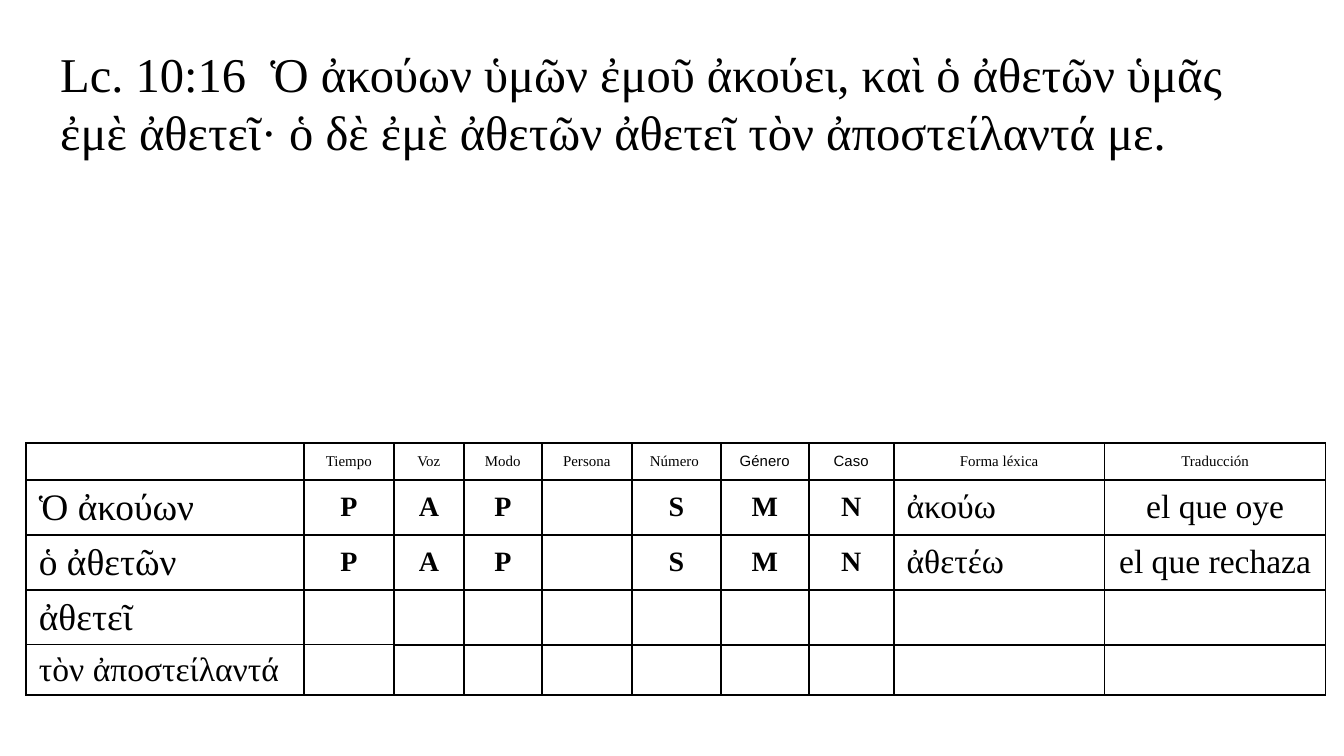
import pptx
import pptx.util
import pptx.dml.color
import pptx.enum.text
import lxml.etree
import pptx.oxml.ns

PX = 914400 / 134.4
BLACK = pptx.dml.color.RGBColor(0, 0, 0)
SERIF = "Times New Roman"
LEFT = pptx.enum.text.PP_ALIGN.LEFT
CENTER = pptx.enum.text.PP_ALIGN.CENTER
MIDDLE = pptx.enum.text.MSO_ANCHOR.MIDDLE
qn = pptx.oxml.ns.qn


def px(length):
    return pptx.util.Emu(round(length * PX))


def add_text(paragraph, text, size, font=SERIF, bold=False, align=LEFT):
    paragraph.alignment = align
    run = paragraph.add_run()
    run.text = text
    run.font.size = pptx.util.Pt(size)
    run.font.name = font
    run.font.bold = bold
    run.font.color.rgb = BLACK


presentation = pptx.Presentation()
presentation.slide_width = px(1344)
presentation.slide_height = px(756)
slide = presentation.slides.add_slide(presentation.slide_layouts[6])

headings = ["", "Tiempo", "Voz", "Modo", "Persona", "Número ", "Género", "Caso",
            "Forma léxica", "Traducción"]
parsing = ["P", "A", "P", "", "S", "M", "N"]
rows = [
    headings,
    ["Ὁ ἀκούων", *parsing, "ἀκούω", "el que oye"],
    ["ὁ ἀθετῶν", *parsing, "ἀθετέω", "el que rechaza"],
    ["ἀθετεῖ"] + [""] * 9,
    ["τὸν ἀποστείλαντά"] + [""] * 9,
]
column_widths = [278, 90, 70, 78, 90, 89, 88, 85, 211, 221]
row_heights = [37, 55, 55, 55, 50]

analysis = slide.shapes.add_table(
    len(rows), len(headings), px(26), px(443),
    px(sum(column_widths)), px(sum(row_heights))).table
analysis.first_row = False
analysis.horz_banding = False
for column, width in zip(analysis.columns, column_widths):
    column.width = px(width)
for row, height in zip(analysis.rows, row_heights):
    row.height = px(height)

for r, words in enumerate(rows):
    for c, word in enumerate(words):
        cell = analysis.cell(r, c)
        cell.vertical_anchor = MIDDLE
        cell.margin_left = cell.margin_right = px(13)
        cell.margin_top = cell.margin_bottom = px(5)
        properties = cell._tc.get_or_add_tcPr()
        for side in ("L", "R", "T", "B"):
            thin = c < 2 and (side == "B" and r < 4 or side == "T" and r > 0)
            border = lxml.etree.SubElement(
                properties, qn("a:ln" + side), w="9525" if thin else "12700")
            fill = lxml.etree.SubElement(border, qn("a:solidFill"))
            lxml.etree.SubElement(fill, qn("a:srgbClr"), val=str(BLACK))
        cell.fill.background()

        paragraph = cell.text_frame.paragraphs[0]
        if not word:
            lxml.etree.SubElement(paragraph._p, qn("a:endParaRPr"), sz="800")
        elif r == 0:
            font = "Arial" if word in ("Género", "Caso") else SERIF
            add_text(paragraph, word, 8, font, align=CENTER)
        elif c == 0:
            add_text(paragraph, word, 18 if r == 4 else 20)
        elif c < 8:
            add_text(paragraph, word, 15, bold=True, align=CENTER)
        else:
            add_text(paragraph, word, 18, align=LEFT if c == 8 else CENTER)

verse = slide.shapes.add_textbox(px(47), px(36), px(1243), px(132)).text_frame
verse.word_wrap = True
verse.vertical_anchor = MIDDLE
add_text(verse.paragraphs[0],
         "Lc. 10:16  Ὁ ἀκούων ὑμῶν ἐμοῦ ἀκούει, καὶ ὁ ἀθετῶν ὑμᾶς ἐμὲ ἀθετεῖ· "
         "ὁ δὲ ἐμὲ ἀθετῶν ἀθετεῖ τὸν ἀποστείλαντά με.", 26)

presentation.save("out.pptx")
